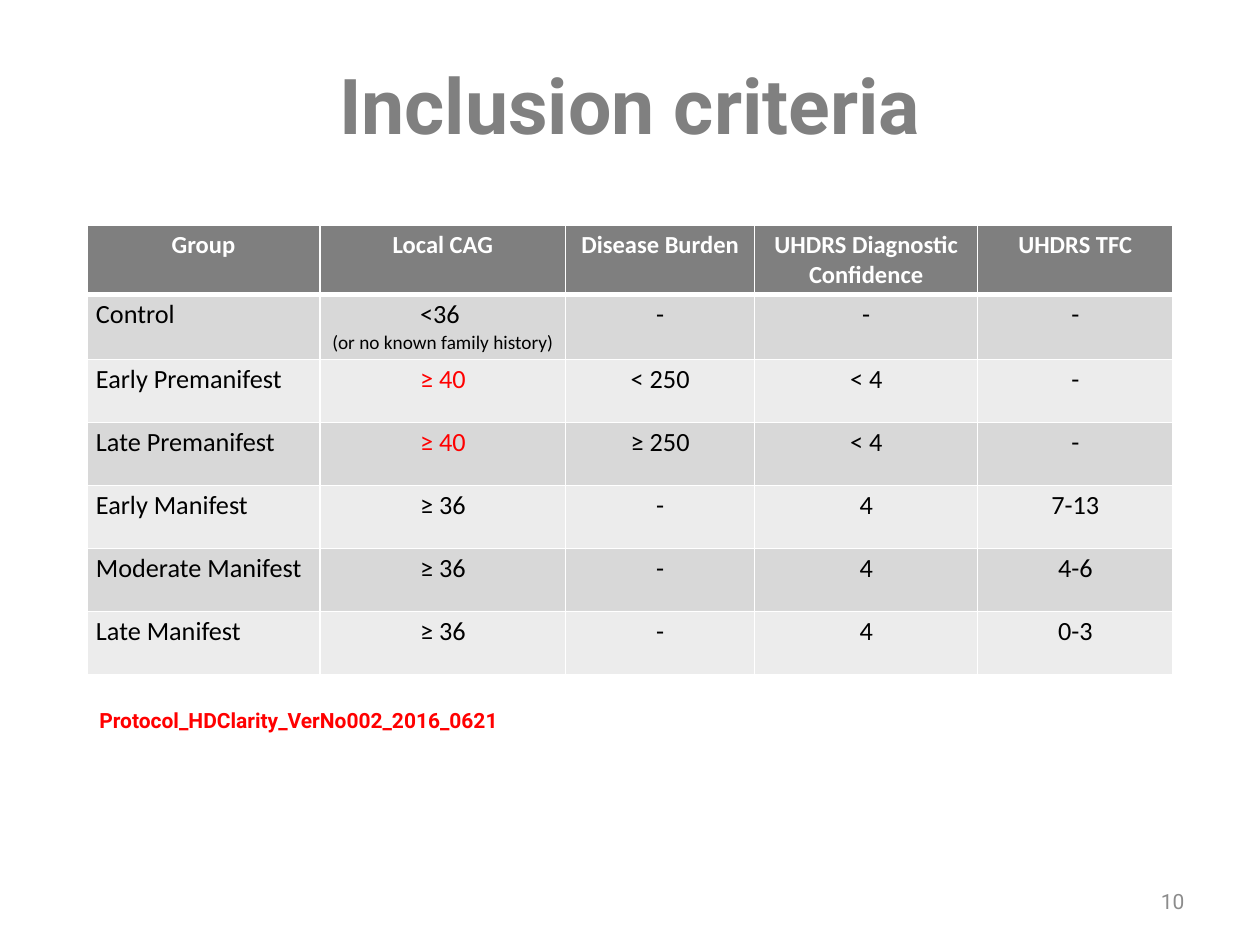
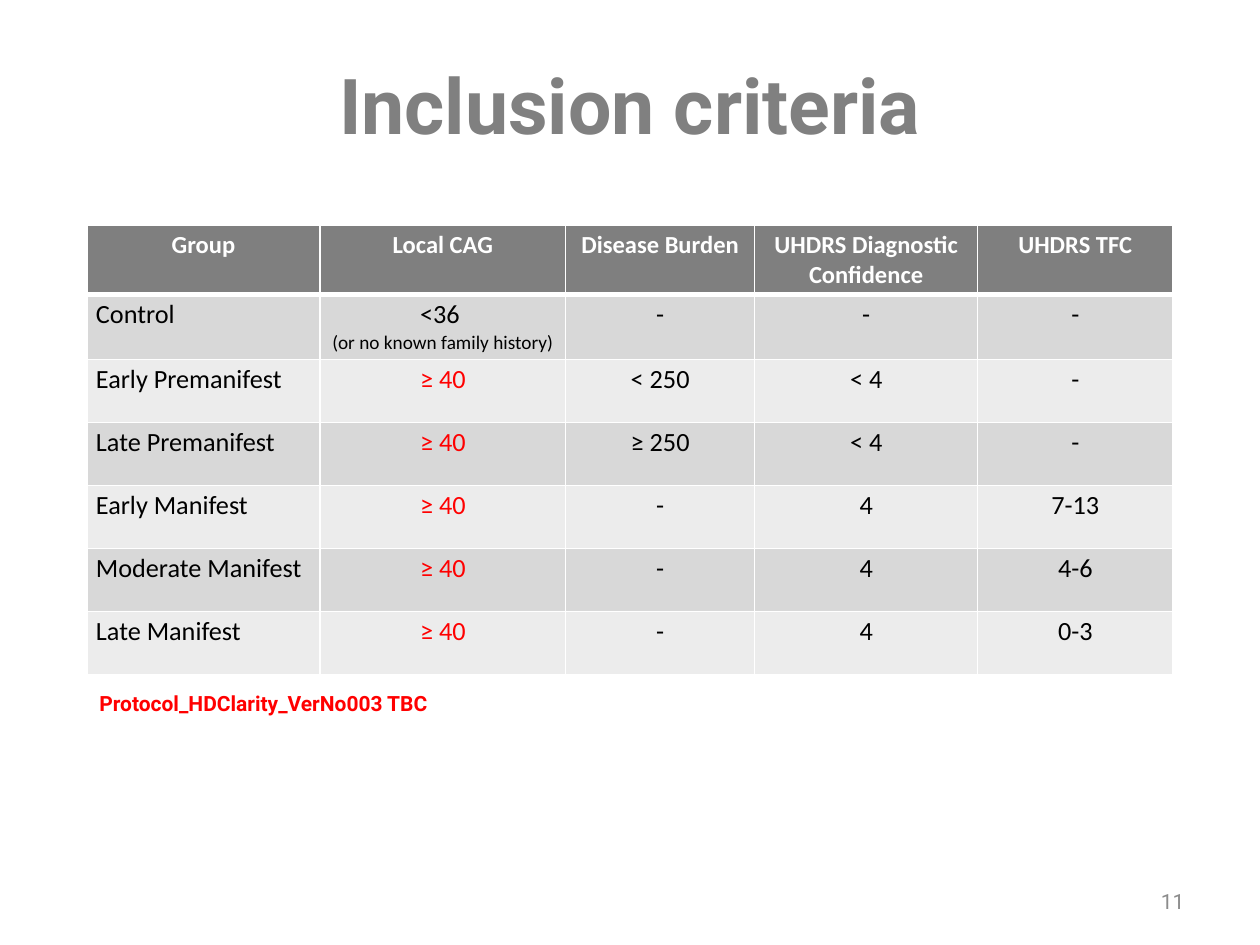
import lxml.etree
import pptx
import pptx.dml.color
import pptx.enum.text
import pptx.oxml.ns
import pptx.util

Pt = pptx.util.Pt
ALIGN = pptx.enum.text.PP_ALIGN
ANCHOR = pptx.enum.text.MSO_ANCHOR

HEADERS = ["Group", "Local CAG", "Disease Burden",
           "UHDRS Diagnostic Confidence", "UHDRS TFC"]
GROUPS = ["Control", "Early Premanifest", "Late Premanifest",
          "Early Manifest", "Moderate Manifest", "Late Manifest"]
DISEASE_BURDEN = ["-", "< 250", "≥ 250", "-", "-", "-"]
CONFIDENCE = ["-", "< 4", "< 4", "4", "4", "4"]
CAPACITY = ["-", "-", "-", "7-13", "4-6", "0-3"]
CONTROL_CAG = "<36 \n(or no known family history)"
STRICT_CAG = "≥ 40"
COLUMN_WIDTHS = [133.2, 140.4, 108, 127.4, 111.6]
HEADER_HEIGHT, ROW_HEIGHT = 38.2, 36

SLIDES = [
    {"manifest_cag": "≥ 36", "number": "10",
     "protocol": "Protocol_HDClarity_VerNo002_2016_0621",
     "protocol_box": (49.7, 403.2, 275, 16.6)},
    {"manifest_cag": STRICT_CAG, "number": "11",
     "protocol": "Protocol_HDClarity_VerNo003 TBC",
     "protocol_box": (49.7, 396, 248.4, 11.5)},
]


def color(hex_string):
    return pptx.dml.color.RGBColor.from_string(hex_string)


def set_attributes(target, values):
    for name, value in values.items():
        setattr(target, name, value)


def add_border(cell, side, width):
    """Draw a white line on side L, R, T or B; call in that order, before the fill."""
    properties = cell._tc.get_or_add_tcPr()
    line = lxml.etree.SubElement(
        properties, pptx.oxml.ns.qn(f"a:ln{side}"), w=str(Pt(width)))
    fill = lxml.etree.SubElement(line, pptx.oxml.ns.qn("a:solidFill"))
    lxml.etree.SubElement(fill, pptx.oxml.ns.qn("a:srgbClr"), val="FFFFFF")


class CriteriaDeck:
    TITLE = {"name": "Roboto", "size": Pt(44), "bold": True}
    LABEL = {"name": "Roboto", "size": Pt(12)}
    HEADER = {"name": "Calibri", "size": Pt(14), "bold": True}
    BODY = {"name": "Calibri", "size": Pt(15), "bold": False}
    SMALL = {**BODY, "size": Pt(11)}
    RED = "FF0000"
    BANDS = ["ECECEC", "D8D8D8"]

    def __init__(self):
        self.presentation = pptx.Presentation()
        set_attributes(self.presentation,
                       {"slide_width": Pt(720), "slide_height": Pt(540)})
        self.slide = None

    def new_slide(self):
        title_only = self.presentation.slide_layouts[5]
        self.slide = self.presentation.slides.add_slide(title_only)

    def set_paragraph(self, paragraph, text, font_values, hex_color, alignment):
        paragraph.text = text
        paragraph.alignment = alignment
        set_attributes(paragraph.font, font_values)
        paragraph.font.color.rgb = color(hex_color)

    def title(self, text):
        shape = self.slide.shapes.title
        set_attributes(shape, {"left": Pt(36), "top": Pt(21.6),
                               "width": Pt(648), "height": Pt(90)})
        set_attributes(shape.text_frame, {
            "auto_size": pptx.enum.text.MSO_AUTO_SIZE.NONE,
            "vertical_anchor": ANCHOR.TOP, "margin_top": Pt(11.3)})
        self.set_paragraph(shape.text_frame.paragraphs[0], text, self.TITLE,
                           "808080", ALIGN.CENTER)

    def label(self, text, box, hex_color, alignment=ALIGN.LEFT, bold=False):
        frame = self.slide.shapes.add_textbox(*map(Pt, box)).text_frame
        set_attributes(frame, {"word_wrap": True, "margin_top": 0,
                               "margin_bottom": 0,
                               "vertical_anchor": ANCHOR.MIDDLE})
        self.set_paragraph(frame.paragraphs[0], text, {**self.LABEL, "bold": bold},
                           hex_color, alignment)

    def cell(self, cell, text, row, column):
        set_attributes(cell, {"margin_left": Pt(5.15), "margin_right": Pt(5.15),
                              "margin_top": Pt(2.6), "margin_bottom": Pt(2.6)})
        borders = {"L": 1, "R": 1, "T": 3 if row == 1 else 1,
                   "B": 3 if row == 0 else 1}
        for side, width in borders.items():
            add_border(cell, side, width)
        cell.fill.solid()
        cell.fill.fore_color.rgb = color(self.BANDS[row % 2] if row else "7F7F7F")

        first_line, *small_lines = text.split("\n")
        font_values = self.BODY if row else self.HEADER
        text_color = "000000" if row else "FFFFFF"
        if text == STRICT_CAG:
            text_color = self.RED
        alignment = ALIGN.LEFT if row and column == 0 else ALIGN.CENTER
        frame = cell.text_frame
        self.set_paragraph(frame.paragraphs[0], first_line, font_values,
                           text_color, alignment)
        for line in small_lines:
            self.set_paragraph(frame.add_paragraph(), line, self.SMALL,
                               text_color, alignment)

    def table(self, rows):
        heights = [HEADER_HEIGHT] + [ROW_HEIGHT] * (len(rows) - 1)
        table = self.slide.shapes.add_table(
            len(rows), len(COLUMN_WIDTHS), Pt(49.7), Pt(128.9),
            Pt(sum(COLUMN_WIDTHS)), Pt(sum(heights))).table
        for column, width in zip(table.columns, COLUMN_WIDTHS):
            column.width = Pt(width)
        for row, height in zip(table.rows, heights):
            row.height = Pt(height)
        for row, texts in enumerate(rows):
            for column, text in enumerate(texts):
                self.cell(table.cell(row, column), text, row, column)


def main():
    deck = CriteriaDeck()
    for content in SLIDES:
        local_cag = [CONTROL_CAG] + [STRICT_CAG] * 2 + [content["manifest_cag"]] * 3
        deck.new_slide()
        deck.title("Inclusion criteria")
        deck.table([HEADERS, *zip(GROUPS, local_cag, DISEASE_BURDEN,
                                  CONFIDENCE, CAPACITY)])
        deck.label(content["protocol"], content["protocol_box"], deck.RED, bold=True)
        deck.label(content["number"], (516.2, 500.4, 167.8, 28.8),
                   "8C8C8C", ALIGN.RIGHT)
    deck.presentation.save("out.pptx")


if __name__ == "__main__":
    main()
